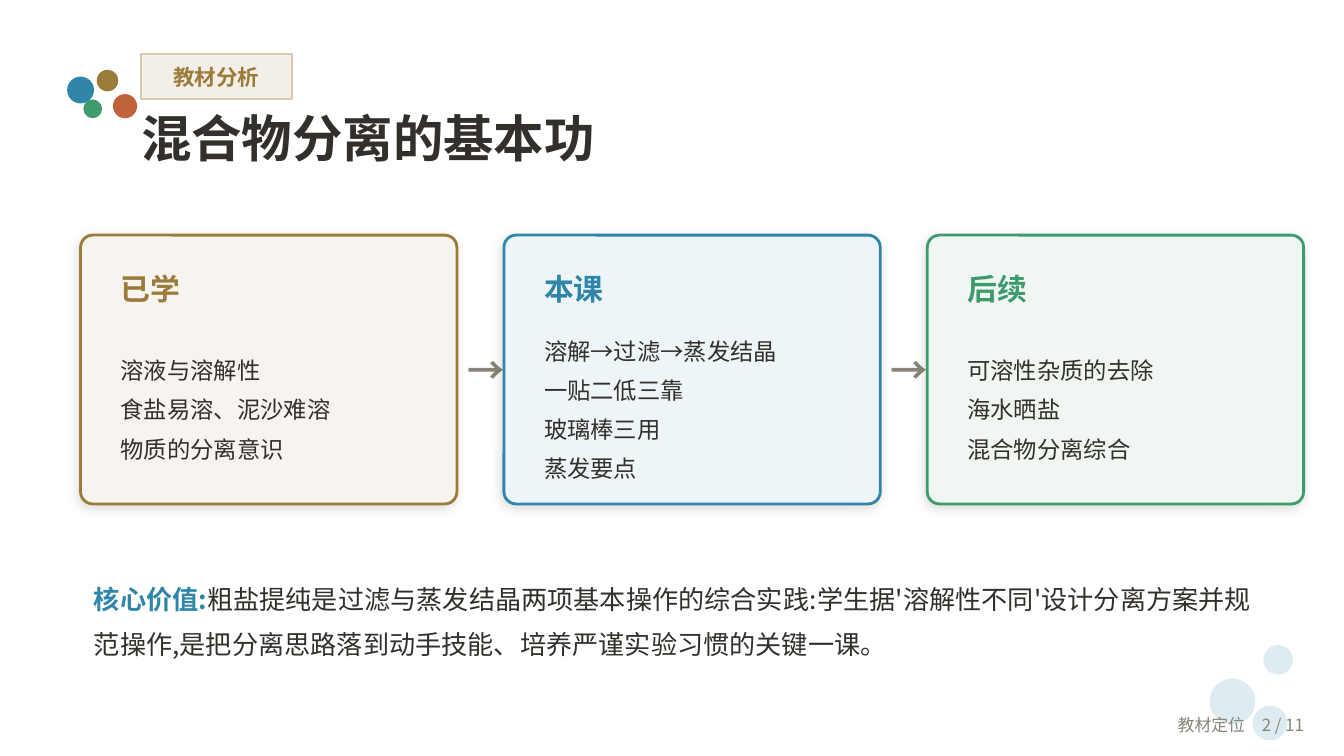
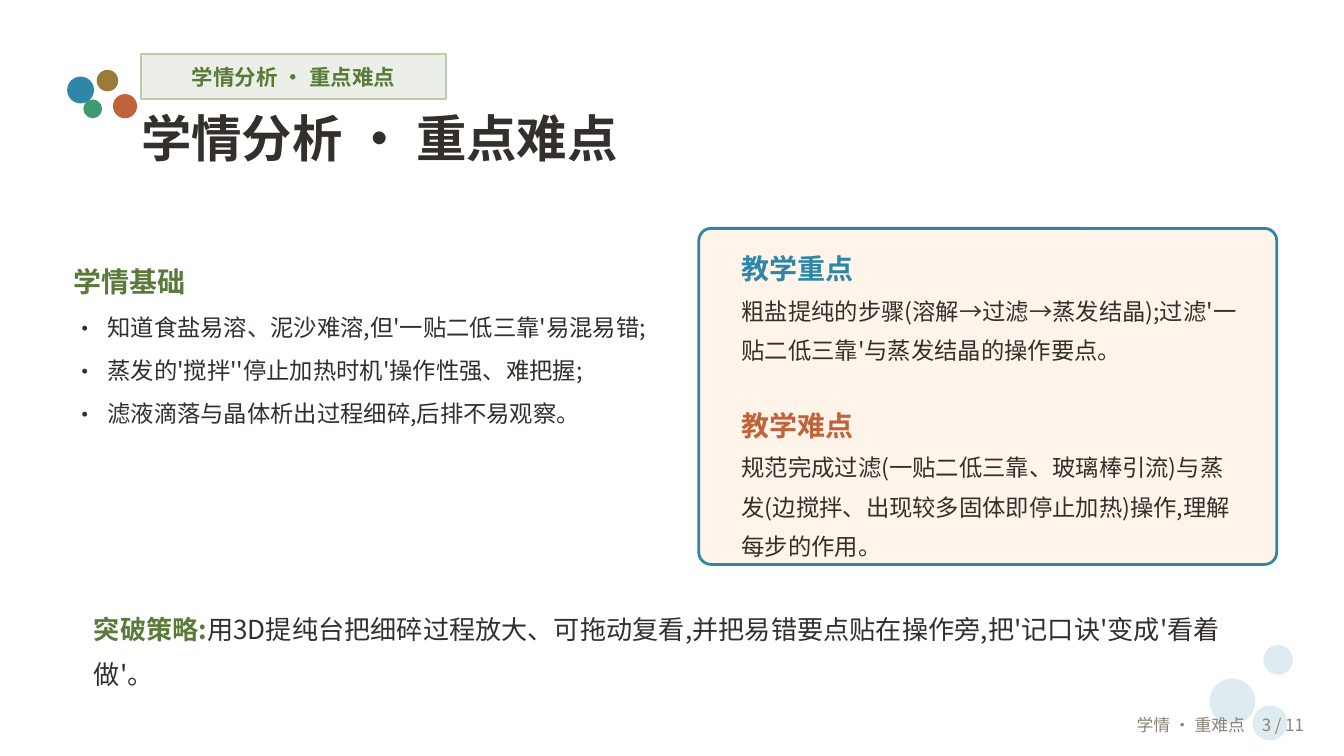
from lxml.etree import SubElement
from pptx import Presentation
from pptx.dml.color import RGBColor
from pptx.enum.lang import MSO_LANGUAGE_ID
from pptx.enum.shapes import MSO_SHAPE
from pptx.enum.text import MSO_ANCHOR, MSO_AUTO_SIZE, PP_ALIGN
from pptx.oxml.ns import qn
from pptx.util import Pt

FONT = "Noto Sans CJK SC"
INK, GREY, MIST = "33302B", "8A8478", "DEECF1"
BLUE, OCHRE, GREEN, RUST, OLIVE = "2F86A8", "9A7B3A", "3F9B6E", "C0623A", "5A7A3A"
NO_MARGINS = {f"margin_{side}": 0 for side in ("left", "top", "right", "bottom")}
TOP = {**NO_MARGINS, "vertical_anchor": MSO_ANCHOR.TOP}

prs = Presentation()
prs.slide_width, prs.slide_height = Pt(720), Pt(405)


def draw(slide, kind, box, fill, line=None, weight=1, radius=None):
    """Add a flat preset shape; box is left, top, width, height in points."""
    shape = slide.shapes.add_shape(kind, *map(Pt, box))
    shape.shadow.inherit = False
    shape.fill.solid()
    shape.fill.fore_color.rgb = RGBColor.from_string(fill)
    if line:
        shape.line.color.rgb = RGBColor.from_string(line)
        shape.line.width = Pt(weight)
    else:
        shape.line.fill.background()
    if radius:
        shape.adjustments[0] = radius
    return shape


def write(shape, paragraphs, frame=None, **layout):
    """Fill a shape with paragraphs, each a list of (text, size, colour, bold) runs."""
    text_frame = shape.text_frame
    frame_format = {"word_wrap": True, "auto_size": MSO_AUTO_SIZE.NONE,
                    "vertical_anchor": MSO_ANCHOR.MIDDLE, **(frame or {})}
    for name, value in frame_format.items():
        setattr(text_frame, name, value)
    for index, runs in enumerate(paragraphs):
        paragraph = text_frame.add_paragraph() if index else text_frame.paragraphs[0]
        for name, value in {"alignment": PP_ALIGN.LEFT, **layout}.items():
            setattr(paragraph, name, value)
        for text, size, colour, bold in runs:
            run = paragraph.add_run()
            run.text = text
            font_format = {"name": FONT, "size": Pt(size), "bold": bold,
                           "language_id": MSO_LANGUAGE_ID.SIMPLIFIED_CHINESE}
            for name, value in font_format.items():
                setattr(run.font, name, value)
            run.font.color.rgb = RGBColor.from_string(colour)
            SubElement(run._r.get_or_add_rPr(), qn("a:ea"), typeface=FONT)
    return text_frame


# Shared heading, decoration, summary and footer
dots = [
    (648, 363.6, 24.48, MIST), (676.8, 345.6, 15.84, MIST), (671.04, 378, 18.72, MIST),
    (36, 41.04, 14.4, BLUE), (51.84, 37.44, 11.52, OCHRE),
    (44.64, 53.28, 10.08, GREEN), (60.48, 50.4, 12.96, RUST),
]
pages = [
    {"tag": "教材分析", "tag_width": 80.64, "tag_colours": ("F3EFE7", "D7CAB0", OCHRE),
     "title": "混合物分离的基本功", "footer": "教材定位　2 / 11",
     "summary_top": 298.8, "summary_height": 61.2, "lead": ("核心价值:", BLUE),
     "summary": "粗盐提纯是过滤与蒸发结晶两项基本操作的综合实践:学生据'溶解性不同'设计分离方案"
                "并规范操作,是把分离思路落到动手技能、培养严谨实验习惯的关键一课。"},
    {"tag": "学情分析 · 重点难点", "tag_width": 163.44, "tag_colours": ("EBEFE7", "BDCAB0", OLIVE),
     "title": "学情分析 · 重点难点", "footer": "学情 · 重难点　3 / 11",
     "summary_top": 320.4, "summary_height": 50.4, "lead": ("突破策略:", OLIVE),
     "summary": "用3D提纯台把细碎过程放大、可拖动复看,并把易错要点贴在操作旁,"
                "把'记口诀'变成'看着做'。"},
]
slides = []
for page in pages:
    slide = prs.slides.add_slide(prs.slide_layouts[5])
    slides.append(slide)
    for left, top, size, colour in dots:
        draw(slide, MSO_SHAPE.OVAL, (left, top, size, size), colour)

    tag_fill, tag_line, tag_ink = page["tag_colours"]
    tag = draw(slide, MSO_SHAPE.RECTANGLE, (75.6, 28.8, page["tag_width"], 24.48), tag_fill, tag_line)
    write(tag, [[(page["tag"], 11.5, tag_ink, True)]], NO_MARGINS, alignment=PP_ALIGN.CENTER)

    title = slide.shapes.title
    title.left, title.top, title.width, title.height = map(Pt, (75.6, 57.6, 604.8, 39.6))
    write(title, [[(page["title"], 27, INK, True)]], TOP)

    lead, lead_colour = page["lead"]
    summary = slide.shapes.add_textbox(
        *map(Pt, (43.2, page["summary_top"], 637.2, page["summary_height"])))
    write(summary, [[(lead, 14, lead_colour, True), (page["summary"], 14, INK, False)]],
          line_spacing=Pt(24))

    footer = slide.shapes.add_textbox(*map(Pt, (576, 377.28, 129.6, 21.6)))
    write(footer, [[(page["footer"], 9, GREY, False)]], alignment=PP_ALIGN.RIGHT)

position, learners = slides

# Position in the textbook: three stages joined by arrows
stages = [
    ("已学", OCHRE, "F7F4EF", ["溶液与溶解性", "食盐易溶、泥沙难溶", "物质的分离意识"]),
    ("本课", BLUE, "EEF5F8", ["溶解→过滤→蒸发结晶", "一贴二低三靠", "玻璃棒三用", "蒸发要点"]),
    ("后续", GREEN, "F0F7F3", ["可溶性杂质的去除", "海水晒盐", "混合物分离综合"]),
]
CARD_WIDTH, CARD_STEP = 201.6, 226.8
for index, (stage, colour, fill, topics) in enumerate(stages):
    left = 43.2 + index * CARD_STEP
    card = draw(position, MSO_SHAPE.ROUNDED_RECTANGLE, (left, 126, CARD_WIDTH, 144),
                fill, colour, 1.5, 0.045)
    effects = card._element.spPr.find(qn("a:effectLst"))
    shadow = SubElement(effects, qn("a:outerShdw"), blurRad=str(Pt(6)), dist=str(Pt(2)),
                        dir="8100000", algn="bl", rotWithShape="0")
    shade = SubElement(shadow, qn("a:srgbClr"), val="000000")
    SubElement(shade, qn("a:alpha"), val="12000")

    heading = position.shapes.add_textbox(*map(Pt, (left + 14.4, 140.4, 172.8, 28.8)))
    write(heading, [[(stage, 16, colour, True)]])
    content = position.shapes.add_textbox(*map(Pt, (left + 14.4, 171.36, 172.8, 90)))
    write(content, [[(topic, 12.5, INK, False)] for topic in topics], line_spacing=Pt(21))
    if index < len(stages) - 1:
        arrow = position.shapes.add_textbox(
            *map(Pt, (left + CARD_WIDTH - 1.44, 183.6, 28.8, 28.8)))
        write(arrow, [[("→", 20, GREY, True)]])

# Learners: what they know, then key and difficult points
basis = learners.shapes.add_textbox(*map(Pt, (39.6, 136.8, 324, 129.6)))
observations = [
    "知道食盐易溶、泥沙难溶,但'一贴二低三靠'易混易错;",
    "蒸发的'搅拌''停止加热时机'操作性强、难把握;",
    "滤液滴落与晶体析出过程细碎,后排不易观察。",
]
basis_text = write(
    basis,
    [[("学情基础", 15, OLIVE, True)]] + [[(item, 12.5, INK, False)] for item in observations],
    TOP, line_spacing=Pt(23))
for paragraph in basis_text.paragraphs[1:]:
    properties = paragraph._p.get_or_add_pPr()
    properties.set("marL", str(Pt(18)))
    properties.set("indent", str(-Pt(18)))
    SubElement(properties, qn("a:buFont"), typeface=FONT)
    SubElement(properties, qn("a:buChar"), char="·")

draw(learners, MSO_SHAPE.ROUNDED_RECTANGLE, (374.4, 122.4, 309.6, 180), "FFF4EA", BLUE, 1.5, 0.036)
focus = learners.shapes.add_textbox(*map(Pt, (390.24, 136.8, 282.24, 158.4)))
focus_text = write(focus, [
    [("教学重点", 15, BLUE, True)],
    [("粗盐提纯的步骤(溶解→过滤→蒸发结晶);过滤'一贴二低三靠'与蒸发结晶的操作要点。", 12.5, INK, False)],
    [("教学难点", 15, RUST, True)],
    [("规范完成过滤(一贴二低三靠、玻璃棒引流)与蒸发(边搅拌、出现较多固体即停止加热)操作,"
      "理解每步的作用。", 12.5, INK, False)],
], line_spacing=Pt(21))
focus_text.paragraphs[2].space_before = Pt(21)

prs.save("out.pptx")
